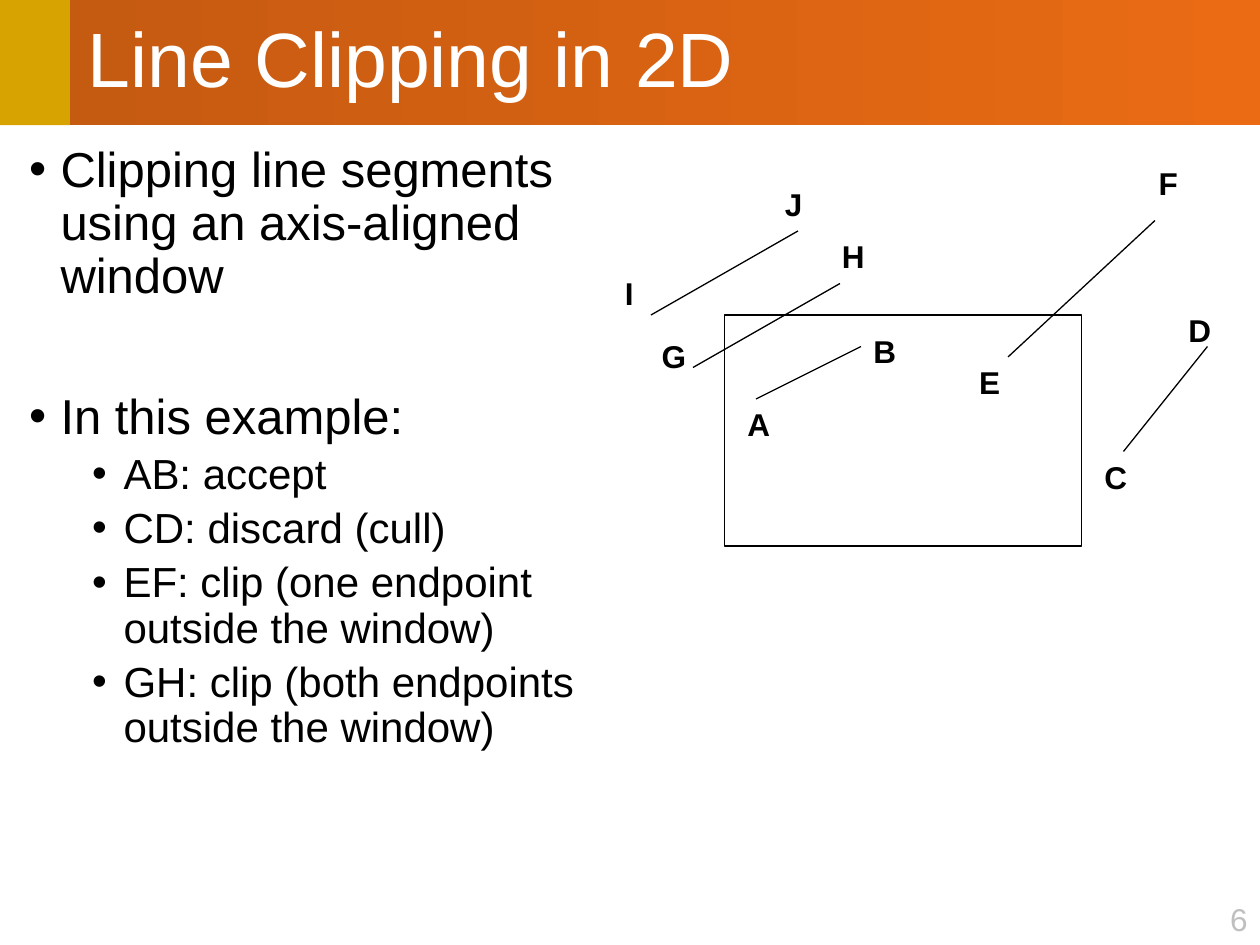
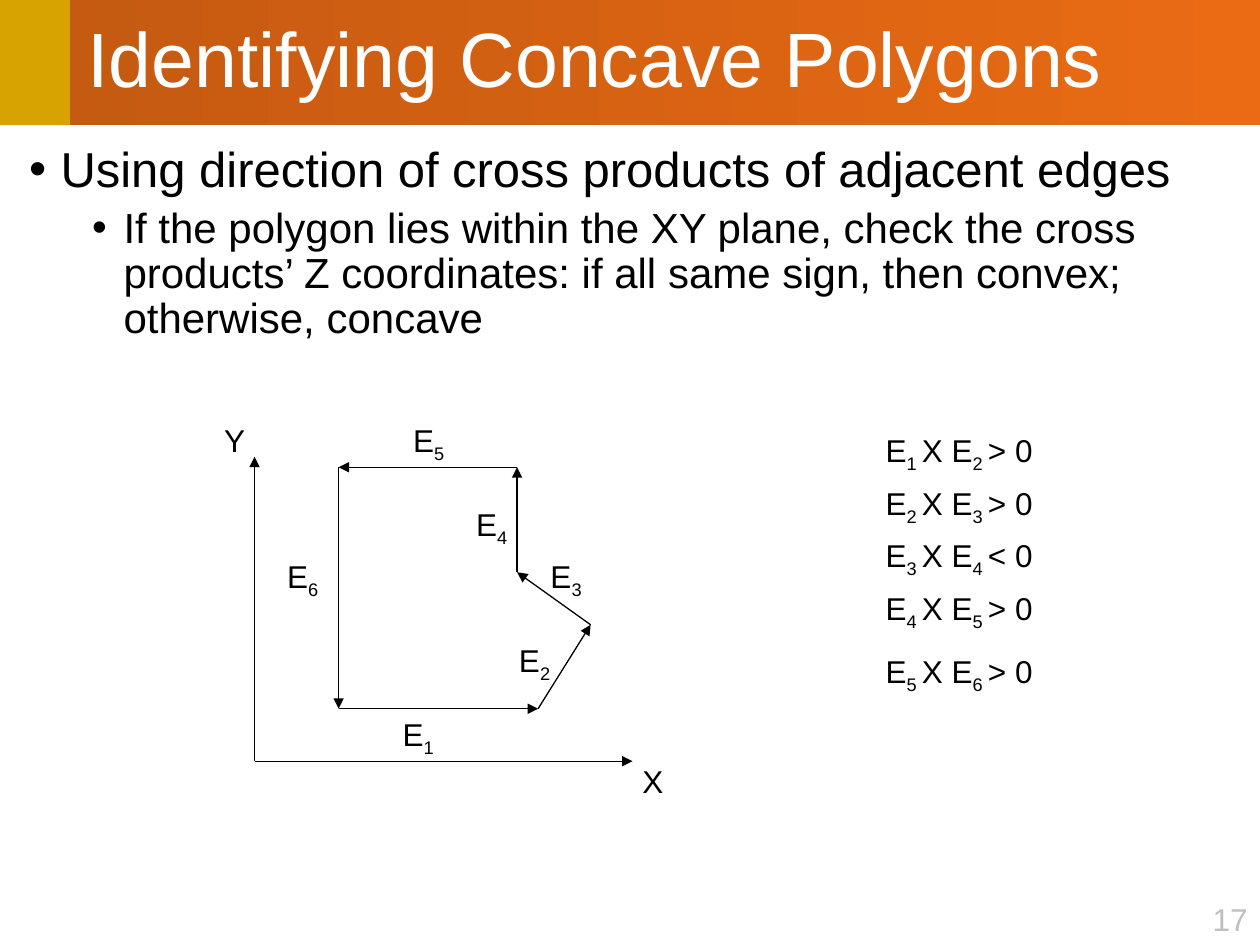
from itertools import pairwise

from lxml.etree import SubElement
from pptx import Presentation
from pptx.dml.color import RGBColor
from pptx.enum.shapes import MSO_CONNECTOR, MSO_SHAPE
from pptx.enum.text import MSO_ANCHOR, MSO_AUTO_SIZE, PP_ALIGN
from pptx.oxml.ns import qn
from pptx.util import Pt

# Shared look
FONT = "Arial"
BLACK, WHITE, GREY = "000000", "FFFFFF", "BFBFBF"
GOLD, RUST, FLAME = "D6A300", "C55A11", "EA6B14"
WIDE, HIGH = 720, 540
BAND, EDGE = 71.5, 40  # title band height, gold block width
LINE = 0.75
LABEL = 18
ROW = 28.8  # height of a one-line label

# Bullet styles by level: size, left margin, space before
LEVELS = [(28, 18, 10), (24, 54, 5)]
HANG = 18


def color(code):
    return RGBColor.from_string(code)


def add_run(para, text, size, code=BLACK, bold=False, sub=False):
    run = para.add_run()
    run.text = text
    font = run.font
    font.name, font.size, font.bold = FONT, Pt(size), bold
    font.color.rgb = color(code)
    if sub:
        run._r.get_or_add_rPr().set("baseline", "-25000")


def add_box(slide, left, top, width, height, fill=None, line=None):
    box = slide.shapes.add_shape(
        MSO_SHAPE.RECTANGLE, Pt(left), Pt(top), Pt(width), Pt(height))
    box.shadow.inherit = False
    if fill:
        box.fill.solid()
        box.fill.fore_color.rgb = color(fill)
    else:
        box.fill.background()
    if line:
        box.line.color.rgb = color(line)
        box.line.width = Pt(LINE)
    else:
        box.line.fill.background()
    return box


def add_line(slide, start, end, arrow=False):
    line = slide.shapes.add_connector(
        MSO_CONNECTOR.STRAIGHT, *(Pt(n) for n in (*start, *end)))
    line.line.color.rgb = color(BLACK)
    line.line.width = Pt(LINE)
    if arrow:
        SubElement(line.line._get_or_add_ln(), qn("a:tailEnd"), type="triangle")
    SubElement(line._element.spPr, qn("a:effectLst"))


def add_label(slide, left, top, width, parts, align=PP_ALIGN.LEFT,
              code=BLACK, bold=False):
    """Place one line of text; every second part is a subscript."""
    box = slide.shapes.add_textbox(Pt(left), Pt(top), Pt(width), Pt(ROW))
    frame = box.text_frame
    frame.word_wrap = False
    frame.auto_size = MSO_AUTO_SIZE.SHAPE_TO_FIT_TEXT
    para = frame.paragraphs[0]
    para.alignment = align
    for i, part in enumerate(parts):
        add_run(para, part, LABEL, code, bold, sub=i % 2 == 1)


def add_title(slide, text):
    band = add_box(slide, EDGE, 0, WIDE - EDGE, BAND)
    band.fill.gradient()
    band.fill.gradient_angle = 0
    for stop, code in zip(band.fill.gradient_stops, (RUST, FLAME)):
        stop.color.rgb = color(code)
    frame = band.text_frame
    frame.word_wrap = True
    frame.vertical_anchor = MSO_ANCHOR.MIDDLE
    para = frame.paragraphs[0]
    para.alignment = PP_ALIGN.LEFT
    para.line_spacing = 0.9
    para._p.get_or_add_pPr().set("marL", str(Pt(3)))
    add_run(para, text, 44, WHITE)


def add_body(slide, items):
    """Fill the body with (level, text, extra space before) bullets."""
    box = slide.shapes.add_textbox(Pt(9.5), Pt(79.5), Pt(702), Pt(430.5))
    frame = box.text_frame
    frame.word_wrap = True
    for i, (level, text, extra) in enumerate(items):
        para = frame.add_paragraph() if i else frame.paragraphs[0]
        size, margin, space = LEVELS[level]
        para.level = level
        para.line_spacing = 0.9
        para.space_before = Pt(space + extra)
        props = para._p.get_or_add_pPr()
        props.set("marL", str(Pt(margin)))
        props.set("indent", str(Pt(-HANG)))
        SubElement(props, qn("a:buFont"), typeface=FONT)
        SubElement(props, qn("a:buChar"), char="•")
        for j, row in enumerate(text.split("\n")):
            if j:
                para.add_line_break()
            add_run(para, row, size)


def add_slide(deck, title, page, items):
    slide = deck.slides.add_slide(deck.slide_layouts[6])
    add_box(slide, 0, 0, EDGE, BAND, GOLD)
    add_label(slide, 683, 511, 37, [page], PP_ALIGN.RIGHT, GREY)
    add_body(slide, items)
    add_title(slide, title)
    return slide


def draw_window(slide):
    add_box(slide, 414, 180, 204, 132, line=BLACK)
    # Segments and their end points
    for start, end in [((642, 258), (690, 198)), ((576, 204), (660, 126)),
                       ((432, 228), (492, 198)), ((396, 210), (480, 162)),
                       ((372, 180), (456, 132))]:
        add_line(slide, start, end)
    # Point names: centre, top
    width = 27
    names = {"G": (384.5, 189), "H": (487.5, 132), "A": (433.5, 228),
             "B": (505.5, 186), "E": (565.5, 204), "F": (667.5, 90),
             "C": (637.5, 258), "D": (685.5, 174), "I": (359.5, 153),
             "J": (453.5, 102)}
    for name, (mid, top) in names.items():
        add_label(slide, mid - width / 2, top, width, [name],
                  PP_ALIGN.CENTER, bold=True)


def draw_shape(slide):
    # Axes
    base = (145.5, 435)
    add_line(slide, base, (145.5, 261), arrow=True)
    add_line(slide, base, (361.5, 435), arrow=True)
    add_label(slide, 360, 432, 27, ["X"])
    add_label(slide, 121, 237, 27, ["Y"])
    # Polygon edges, joined head to tail
    points = [(193.5, 405), (307.5, 405), (337.5, 357), (295.5, 327),
              (295.5, 267), (193.5, 267)]
    for start, end in pairwise(points + points[:1]):
        add_line(slide, start, end, arrow=True)
    # Edge names, in order from 1
    spots = [(223, 405), (289.5, 363), (307.5, 315), (265, 285),
             (229, 237), (157, 315)]
    for i, (left, top) in enumerate(spots, 1):
        add_label(slide, left, top, 33, ["E", str(i)])


def list_signs(slide):
    tops = [243 + 30 * i for i in range(4)] + [369]
    for i, (top, sign) in enumerate(zip(tops, ">><>>"), 1):
        add_label(slide, 499, top, 101,
                  ["E", f"{i} ", "X E", f"{i + 1} ", f"{sign} 0"])


def main():
    deck = Presentation()
    deck.slide_width, deck.slide_height = Pt(WIDE), Pt(HIGH)

    # Line clipping
    slide = add_slide(deck, "Line Clipping in 2D", "6", [
        (0, "Clipping line segments\nusing an axis-aligned\nwindow", 0),
        (0, "In this example:", 40),
        (1, "AB: accept", 0),
        (1, "CD: discard (cull)", 0),
        (1, "EF: clip (one endpoint\noutside the window)", 0),
        (1, "GH: clip (both endpoints\noutside the window)", 0)])
    draw_window(slide)

    # Concave polygons
    slide = add_slide(deck, "Identifying Concave Polygons", "17", [
        (0, "Using direction of cross products of adjacent edges", 0),
        (1, "If the polygon lies within the XY plane, check the cross "
            "products’ Z coordinates: if all same sign, then convex; "
            "otherwise, concave", 0)])
    draw_shape(slide)
    list_signs(slide)

    deck.save("out.pptx")


if __name__ == "__main__":
    main()
